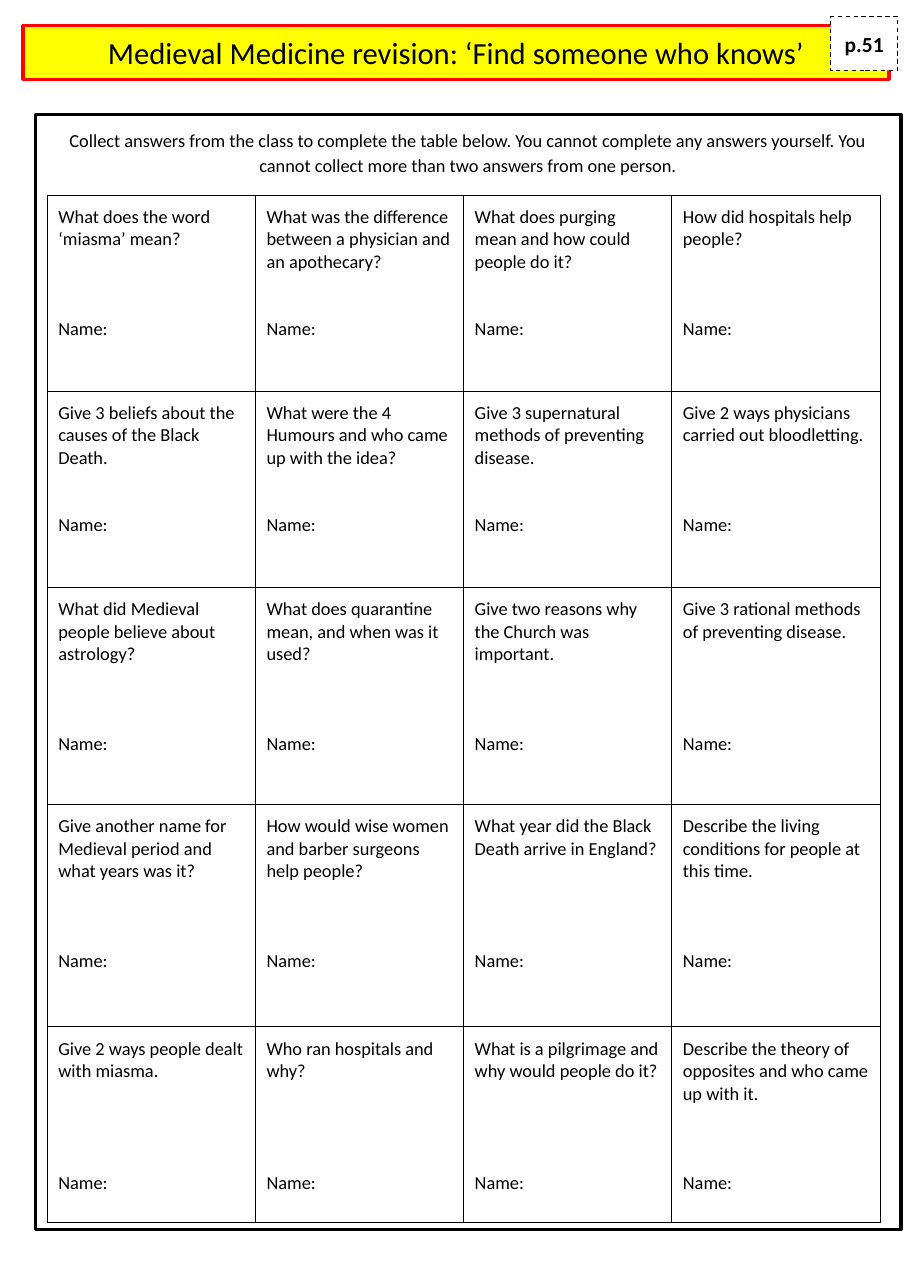
from pptx import Presentation
from pptx.dml.color import RGBColor
from pptx.enum import dml, shapes, text
from pptx.oxml import parse_xml
from pptx.oxml.ns import nsdecls
from pptx.util import Inches, Pt


def color(code):
    return RGBColor.from_string(code)


def style(box, words, size, fill, line, width):
    """Fill, outline and centred text of one box."""
    if fill:
        box.fill.solid()
        box.fill.fore_color.rgb = color(fill)
    else:
        box.fill.background()
    box.line.color.rgb = color(line)
    box.line.width = Pt(width)
    box.shadow.inherit = False
    frame = box.text_frame
    frame.text = words
    frame.word_wrap = True
    frame.auto_size = text.MSO_AUTO_SIZE.NONE
    frame.vertical_anchor = text.MSO_ANCHOR.MIDDLE
    frame.margin_left = frame.margin_right = Inches(0.1)
    frame.margin_top = frame.margin_bottom = Inches(0.1)
    para = frame.paragraphs[0]
    para.alignment = text.PP_ALIGN.CENTER
    font = para.runs[0].font
    font.name, font.size = "Calibri", Pt(size)
    font.color.rgb = color("000000")


deck = Presentation()
deck.slide_width, deck.slide_height = Inches(8.27), Inches(11.69)
slide = deck.slides.add_slide(deck.slide_layouts[5])

# Title bar
title = slide.shapes.title
title.left, title.top = Inches(0.21), Inches(0.23)
title.width, title.height = Inches(7.86), Inches(0.49)
style(title, "Medieval Medicine revision: ‘Find someone who knows’",
      20, "FFFF00", "FF0000", 2.25)

# Framed instructions
frame = slide.shapes.add_shape(
    shapes.MSO_SHAPE.RECTANGLE,
    Inches(0.32), Inches(1.04), Inches(7.86), Inches(10.12))
style(frame, "Collect answers from the class to complete the table below. "
      "You cannot complete any answers yourself. You cannot collect more "
      "than two answers from one person.", 12, None, "000000", 2.25)
frame.text_frame.vertical_anchor = text.MSO_ANCHOR.TOP
frame.text_frame.paragraphs[0].line_spacing = 1.15

# Questions, each with the number of lines it takes
rows = [
    [("What does the word ‘miasma’ mean?", 2),
     ("What was the difference between a physician and an apothecary?", 3),
     ("What does purging mean and how could people do it?", 3),
     ("How did hospitals help people?", 2)],
    [("Give 3 beliefs about the causes of the Black Death.", 3),
     ("What were the 4 Humours and who came up with the idea?", 3),
     ("Give 3 supernatural methods of preventing disease.", 3),
     ("Give 2 ways physicians carried out bloodletting.", 2)],
    [("What did Medieval people believe about astrology?", 3),
     ("What does quarantine mean, and when was it used?", 3),
     ("Give two reasons why the Church was important.", 3),
     ("Give 3 rational methods of preventing disease.", 2)],
    [("Give another name for Medieval period and what years was it?", 3),
     ("How would wise women and barber surgeons help people?", 3),
     ("What year did the Black Death arrive in England?", 2),
     ("Describe the living conditions for people at this time.", 3)],
    [("Give 2 ways people dealt with miasma.", 2),
     ("Who ran hospitals and why?", 2),
     ("What is a pilgrimage and why would people do it?", 2),
     ("Describe the theory of opposites and who came up with it.", 3)],
]
highs = [1.78, 1.78, 1.97, 2.02, 1.78]
drops = [5, 5, 6, 6, 6]  # lines above "Name:"
pitch = 14.65  # points per line of 12 pt text

# Question table
grid = slide.shapes.add_table(
    5, 4, Inches(0.43), Inches(1.77), Inches(7.56), Inches(sum(highs))).table
grid.first_row = grid.horz_banding = False
for col in grid.columns:
    col.width = Inches(1.89)
for r, row in enumerate(rows):
    grid.rows[r].height = Inches(highs[r])
    for c, (ask, lines) in enumerate(row):
        cell = grid.cell(r, c)
        cell.margin_left = cell.margin_right = Inches(0.1)
        cell.margin_top = cell.margin_bottom = Inches(0.1)
        cell.text_frame.text = ask
        name = cell.text_frame.add_paragraph()
        name.text = "Name:"
        name.space_before = Pt((drops[r] - lines) * pitch)
        for para in cell.text_frame.paragraphs:
            font = para.runs[0].font
            font.name, font.size = "Calibri", Pt(12)
            font.color.rgb = color("000000")
        # Borders come before the fill in the cell properties
        props = cell._tc.get_or_add_tcPr()
        for side in ("lnL", "lnR", "lnT", "lnB"):
            props.append(parse_xml(
                f'<a:{side} {nsdecls("a")} w="9525"><a:solidFill>'
                f'<a:srgbClr val="000000"/></a:solidFill></a:{side}>'))
        cell.fill.background()

# Page tag
tag = slide.shapes.add_shape(
    shapes.MSO_SHAPE.RECTANGLE,
    Inches(7.54), Inches(0.15), Inches(0.61), Inches(0.49))
style(tag, "p.51", 14, "FFFFFF", "000000", 0.75)
tag.line.dash_style = dml.MSO_LINE.DASH
tag.text_frame.paragraphs[0].runs[0].font.bold = True

deck.save("out.pptx")
